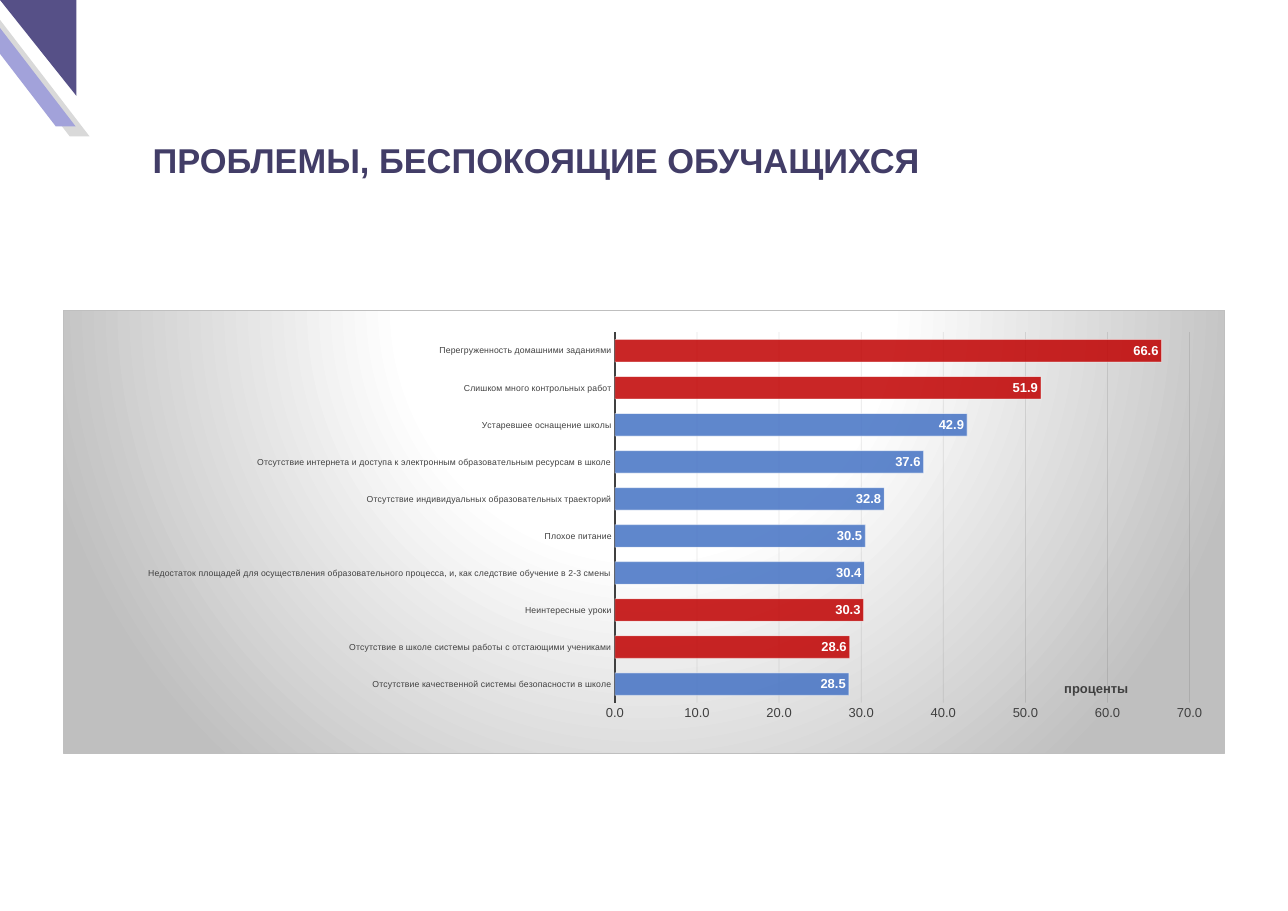
from lxml.etree import SubElement
from pptx import Presentation
from pptx.chart.data import CategoryChartData
from pptx.dml.color import RGBColor
from pptx.enum.chart import XL_CHART_TYPE, XL_LABEL_POSITION, XL_TICK_MARK
from pptx.enum.shapes import MSO_SHAPE
from pptx.enum.text import MSO_ANCHOR, MSO_AUTO_SIZE, PP_ALIGN
from pptx.oxml import parse_xml
from pptx.oxml.ns import nsdecls, qn
from pptx.util import Pt

PX = 9144  # 100 px to the inch
FONT = "Arial"
COLOURS = {
    "grey": "D9D9D9", "lilac": "A2A2DA", "violet": "565087", "heading": "423D67",
    "blue": "4472C4", "red": "C00000", "white": "FFFFFF", "label": "404040",
    "grid": "0D0D0D", "edge": "BFBFBF", "black": "000000",
}
HEADING = "ПРОБЛЕМЫ, БЕСПОКОЯЩИЕ ОБУЧАЩИХСЯ"
PROBLEMS = [  # problem, percent, bar colour; from the bottom bar up
    ("Отсутствие качественной системы безопасности в школе", 28.5, "blue"),
    ("Отсутствие в школе системы работы с отстающими учениками", 28.6, "red"),
    ("Неинтересные уроки", 30.3, "red"),
    ("Недостаток площадей для осуществления образовательного процесса, "
     "и, как следствие обучение в 2-3 смены", 30.4, "blue"),
    ("Плохое питание", 30.5, "blue"),
    ("Отсутствие индивидуальных образовательных траекторий", 32.8, "blue"),
    ("Отсутствие интернета и доступа к электронным образовательным "
     "ресурсам в школе", 37.6, "blue"),
    ("Устаревшее оснащение школы", 42.9, "blue"),
    ("Слишком много контрольных работ", 51.9, "red"),
    ("Перегруженность домашними заданиями", 66.6, "red"),
]


def rgb(name):
    return RGBColor.from_string(COLOURS[name])


def style_font(font, size, colour, bold=False):
    font.name, font.size, font.bold = FONT, Pt(size), bold
    font.color.rgb = rgb(colour)


def style_line(line, colour, width):
    line.color.rgb = rgb(colour)
    line.width = Pt(width)


def set_opacity(colours, percent):
    for colour in colours:
        SubElement(colour, qn("a:alpha")).set("val", str(percent * 1000))


def add_corner(slide, kind, box, colour, flips, slant=None):
    corner = slide.shapes.add_shape(kind, *(n * PX for n in box))
    corner.shadow.inherit = False
    corner.fill.solid()
    corner.fill.fore_color.rgb = rgb(colour)
    corner.line.fill.background()
    if slant:
        corner.adjustments[0] = slant
    for flip in flips:
        corner.element.spPr.xfrm.set(flip, "1")


def set_heading(slide):
    heading = slide.shapes.title
    heading.left, heading.top, heading.width, heading.height = (
        n * PX for n in (196, 174, 1182, 64))
    frame = heading.text_frame
    frame.word_wrap = True
    frame.auto_size = MSO_AUTO_SIZE.SHAPE_TO_FIT_TEXT
    frame.vertical_anchor = MSO_ANCHOR.TOP
    frame.margin_left = 0
    frame.paragraphs[0].alignment = PP_ALIGN.LEFT
    run = frame.paragraphs[0].add_run()
    run.text = HEADING
    style_font(run.font, 31.8, "heading", True)


def set_layout(parent, **places):
    """Give a plot area or an axis title a manual layout in chart fractions."""
    inner = '<c:layoutTarget val="inner"/>' if "w" in places else ""
    modes = '<c:xMode val="edge"/><c:yMode val="edge"/>'
    values = "".join(f'<c:{key} val="{value}"/>' for key, value in places.items())
    layout = parse_xml(f'<c:layout {nsdecls("c")}><c:manualLayout>{inner}{modes}'
                       f'{values}</c:manualLayout></c:layout>')
    old = parent.find(qn("c:layout"))
    if old is None:
        parent.insert(0, layout)
    else:
        parent.replace(old, layout)


def set_backdrop(chart):
    stops = "".join(
        f'<a:gs pos="{place * 1000}"><a:srgbClr val="{COLOURS[name]}"/></a:gs>'
        for place, name in ((0, "white"), (39, "white"), (100, "edge")))
    backdrop = parse_xml(
        f'<c:spPr {nsdecls("c", "a")}><a:gradFill><a:gsLst>{stops}</a:gsLst>'
        '<a:path path="circle"><a:fillToRect l="50000" t="-80000" r="50000" '
        'b="180000"/></a:path></a:gradFill><a:ln w="9525"><a:solidFill>'
        f'<a:srgbClr val="{COLOURS["edge"]}"/></a:solidFill></a:ln></c:spPr>')
    chart.element.find(qn("c:chart")).addnext(backdrop)


def style_axes(chart):
    problems, percents = chart.category_axis, chart.value_axis
    for axis, size in ((problems, 8), (percents, 12)):
        axis.major_tick_mark = axis.minor_tick_mark = XL_TICK_MARK.NONE
        style_font(axis.tick_labels.font, size, "label")
    style_line(problems.format.line, "label", 1.5)
    percents.format.line.fill.background()
    percents.minimum_scale, percents.maximum_scale = 0, 70
    percents.major_unit = 10
    percents.tick_labels.number_format = "0.0"
    percents.tick_labels.number_format_is_linked = False
    style_line(percents.major_gridlines.format.line, "grid", 0.75)
    set_opacity(chart.element.xpath(".//c:majorGridlines//a:srgbClr"), 10)
    run = percents.axis_title.text_frame.paragraphs[0].add_run()
    run.text = "проценты"
    style_font(run.font, 12, "label", True)
    set_layout(chart.element.xpath(".//c:valAx/c:title")[0], x=0.86, y=0.83)


def style_bars(chart):
    plot = chart.plots[0]
    plot.gap_width = 65
    plot.vary_by_categories = False
    bars = plot.series[0]
    bars.invert_if_negative = False
    formats = [(bars.format, "blue")]
    formats += [(bars.points[i].format, colour)
                for i, (_, _, colour) in enumerate(PROBLEMS) if colour != "blue"]
    for bar, colour in formats:
        bar.fill.solid()
        bar.fill.fore_color.rgb = rgb(colour)
        style_line(bar.line, "white", 0.75)
    set_opacity(chart.element.xpath(".//c:ser//c:spPr/a:solidFill/a:srgbClr"), 85)
    set_opacity(chart.element.xpath(".//c:ser//a:ln//a:srgbClr"), 50)
    labels = bars.data_labels
    labels.show_value = True
    labels.position = XL_LABEL_POSITION.INSIDE_END
    labels.number_format = "0.0"
    labels.number_format_is_linked = False
    style_font(labels.font, 12, "white", True)


def add_problem_chart(slide):
    data = CategoryChartData(number_format="0.0")
    data.categories = [problem for problem, _, _ in PROBLEMS]
    data.add_series("Series 1", [percent for _, percent, _ in PROBLEMS])
    box = (n * PX for n in (81, 398, 1491, 569))
    chart = slide.shapes.add_chart(XL_CHART_TYPE.BAR_CLUSTERED, *box, data).chart
    chart.has_legend = chart.has_title = False
    style_font(chart.font, 10, "black")
    style_axes(chart)
    style_bars(chart)
    set_layout(chart.element.xpath(".//c:plotArea")[0],
               x=0.475, y=0.049, w=0.495, h=0.837)
    set_backdrop(chart)


def main():
    deck = Presentation()
    deck.slide_width, deck.slide_height = 1653 * PX, 1169 * PX
    slide = deck.slides.add_slide(deck.slide_layouts[5])
    for left, top, colour in ((-35, 13, "grey"), (-53, 0, "lilac")):
        add_corner(slide, MSO_SHAPE.PARALLELOGRAM, (left, top, 150, 162),
                   colour, ["flipH"], 0.83)
    add_corner(slide, MSO_SHAPE.RIGHT_TRIANGLE, (0, 0, 98, 123),
               "violet", ["flipH", "flipV"])
    set_heading(slide)
    add_problem_chart(slide)
    deck.save("out.pptx")


if __name__ == "__main__":
    main()
